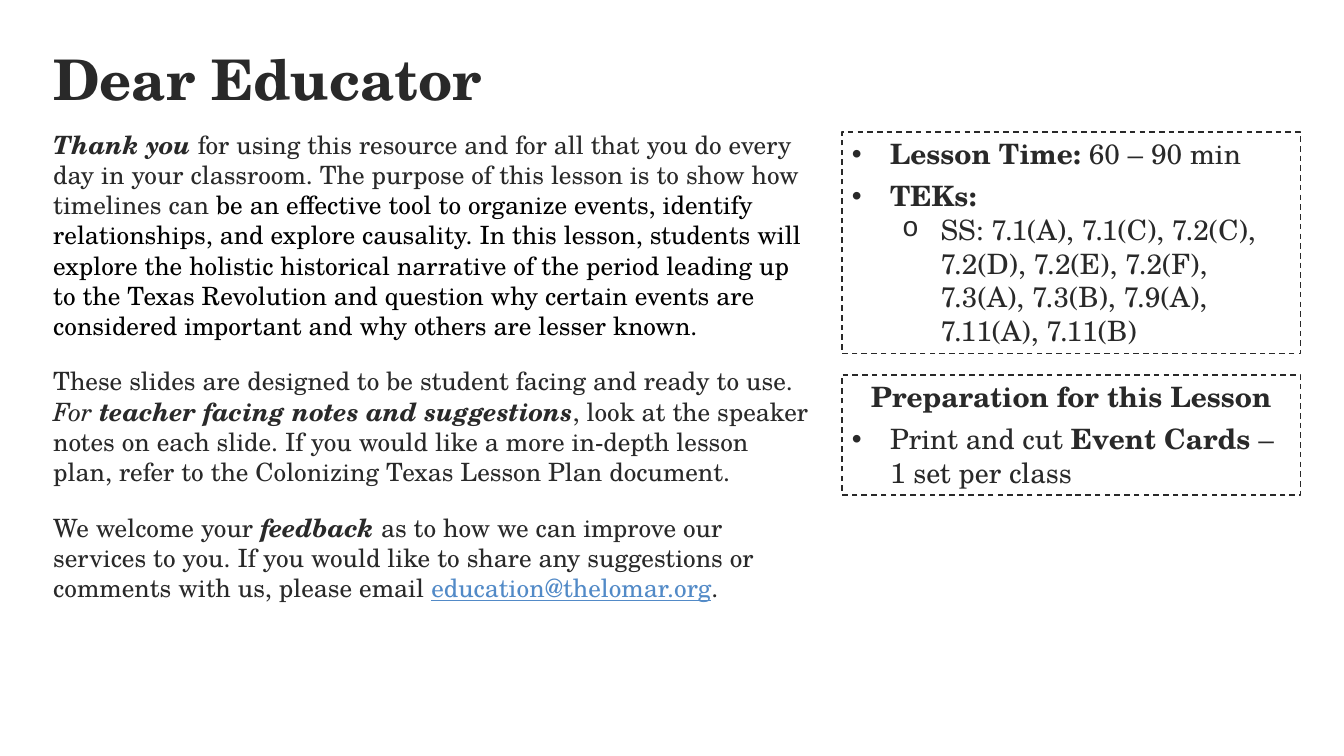
import pptx
import pptx.util
import pptx.dml.color
import pptx.enum.dml
import pptx.enum.shapes
import pptx.enum.text
import lxml.etree

COLORS = {"ink": "292929", "black": "000000", "link": "528AC7"}
FONT = "TeX Gyre Schola"
WIDTH, HEIGHT = 13.33, 7.5
LEFT, RIGHT = 0.43, 12.9
SIDE_LEFT = 8.35
SIDE_WIDTH = RIGHT - SIDE_LEFT
BULLET_FONTS = {"•": "Arial", "o": "Courier New"}

LETTER = [
    ([("Thank you", "bi", "ink"),
      (" for using this resource and for all that you do every day in your classroom. "
       "The purpose of this lesson is to show how timelines can ", "", "ink"),
      ("be an effective tool to organize events, identify relationships, and explore "
       "causality. In this lesson, students will explore the holistic historical narrative "
       "of the period leading up to the Texas Revolution and question why certain events "
       "are considered important and why others are lesser known.", "", "black")], 18),
    ([("These slides are designed to be student facing and ready to use. ", "", "ink"),
      ("For ", "i", "ink"),
      ("teacher facing notes and suggestions", "bi", "ink"),
      (", look at the speaker notes on each slide. If you would like a more in-depth lesson "
       "plan, refer to the Colonizing Texas Lesson Plan document.", "", "ink")], 18),
    ([("We welcome your ", "", "ink"),
      ("feedback ", "bi", "ink"),
      ("as to how we can improve our services to you. If you would like to share any "
       "suggestions or comments with us, please email ", "", "ink"),
      ("education@thelomar.org", "u", "link"),
      (".", "", "ink")], 6),
]

LESSON_FACTS = [
    ([("Lesson Time:", "b", "ink"), (" 60 – 90 min", "", "ink")], 6, "•", 0),
    ([("TEKs:", "b", "ink")], 0, "•", 0),
    ([("SS: 7.1(A), 7.1(C), 7.2(C), 7.2(D), 7.2(E), 7.2(F), 7.3(A), 7.3(B), 7.9(A), "
       "7.11(A), 7.11(B)", "", "ink")], 0, "o", 1),
]

PREPARATION = [
    ([("Preparation for this Lesson", "b", "ink")], 6, None, 0),
    ([("Print and cut ", "", "ink"), ("Event Cards", "b", "ink"),
      (" – 1 set per class", "", "ink")], 6, "•", 0),
]


def inches(*lengths):
    return [pptx.util.Inches(length) for length in lengths]


def color(name):
    return pptx.dml.color.RGBColor.from_string(COLORS[name])


def add_bullet(paragraph, mark, level):
    properties = paragraph._p.get_or_add_pPr()
    properties.set("marL", str(pptx.util.Inches(0.38 + 0.5 * level)))
    properties.set("indent", str(pptx.util.Inches(-0.38)))
    for tag, key, value in (("buFont", "typeface", BULLET_FONTS[mark]),
                            ("buChar", "char", mark)):
        lxml.etree.SubElement(properties, pptx.oxml.ns.qn("a:" + tag)).set(key, value)


def write_paragraph(frame, position, pieces, size, space_after=0, mark=None, level=0):
    paragraph = frame.add_paragraph() if position else frame.paragraphs[0]
    paragraph.alignment = pptx.enum.text.PP_ALIGN.LEFT
    paragraph.level = level
    paragraph.space_after = pptx.util.Pt(space_after)
    if mark:
        add_bullet(paragraph, mark, level)
    for words, style, tone in pieces:
        run = paragraph.add_run()
        run.text = words
        run.font.name = FONT
        run.font.size = pptx.util.Pt(size)
        run.font.bold = "b" in style
        run.font.italic = "i" in style
        run.font.underline = "u" in style
        run.font.color.rgb = color(tone)
    return paragraph


def add_heading(slide, box):
    frame = slide.shapes.add_textbox(*inches(*box)).text_frame
    frame.word_wrap = True
    frame.vertical_anchor = pptx.enum.text.MSO_ANCHOR.MIDDLE
    heading = write_paragraph(frame, 0, [("Dear Educator", "b", "ink")], 40)
    heading.line_spacing = 0.9


def add_letter(slide, box):
    frame = slide.shapes.add_textbox(*inches(*box)).text_frame
    frame.word_wrap = True
    for position, (pieces, space_after) in enumerate(LETTER):
        write_paragraph(frame, position, pieces, 18, space_after)


def add_dashed_panel(slide, box, items):
    panel = slide.shapes.add_shape(pptx.enum.shapes.MSO_SHAPE.RECTANGLE, *inches(*box))
    panel.shadow.inherit = False
    panel.fill.background()
    panel.line.color.rgb = color("ink")
    panel.line.width = pptx.util.Pt(1)
    panel.line.dash_style = pptx.enum.dml.MSO_LINE.DASH
    frame = panel.text_frame
    frame.word_wrap = True
    frame.vertical_anchor = pptx.enum.text.MSO_ANCHOR.TOP
    for position, (pieces, space_after, mark, level) in enumerate(items):
        paragraph = write_paragraph(frame, position, pieces, 20, space_after, mark, level)
        if not mark:
            paragraph.alignment = pptx.enum.text.PP_ALIGN.CENTER


def main():
    presentation = pptx.Presentation()
    presentation.slide_width, presentation.slide_height = inches(WIDTH, HEIGHT)
    slide = presentation.slides.add_slide(presentation.slide_layouts[6])
    add_heading(slide, (LEFT, 0.42, RIGHT - LEFT, 0.79))
    add_letter(slide, (LEFT, 1.23, 7.74, 4.87))
    add_dashed_panel(slide, (SIDE_LEFT, 3.72, SIDE_WIDTH, 1.19), PREPARATION)
    add_dashed_panel(slide, (SIDE_LEFT, 1.31, SIDE_WIDTH, 2.2), LESSON_FACTS)
    presentation.save("out.pptx")


if __name__ == "__main__":
    main()
